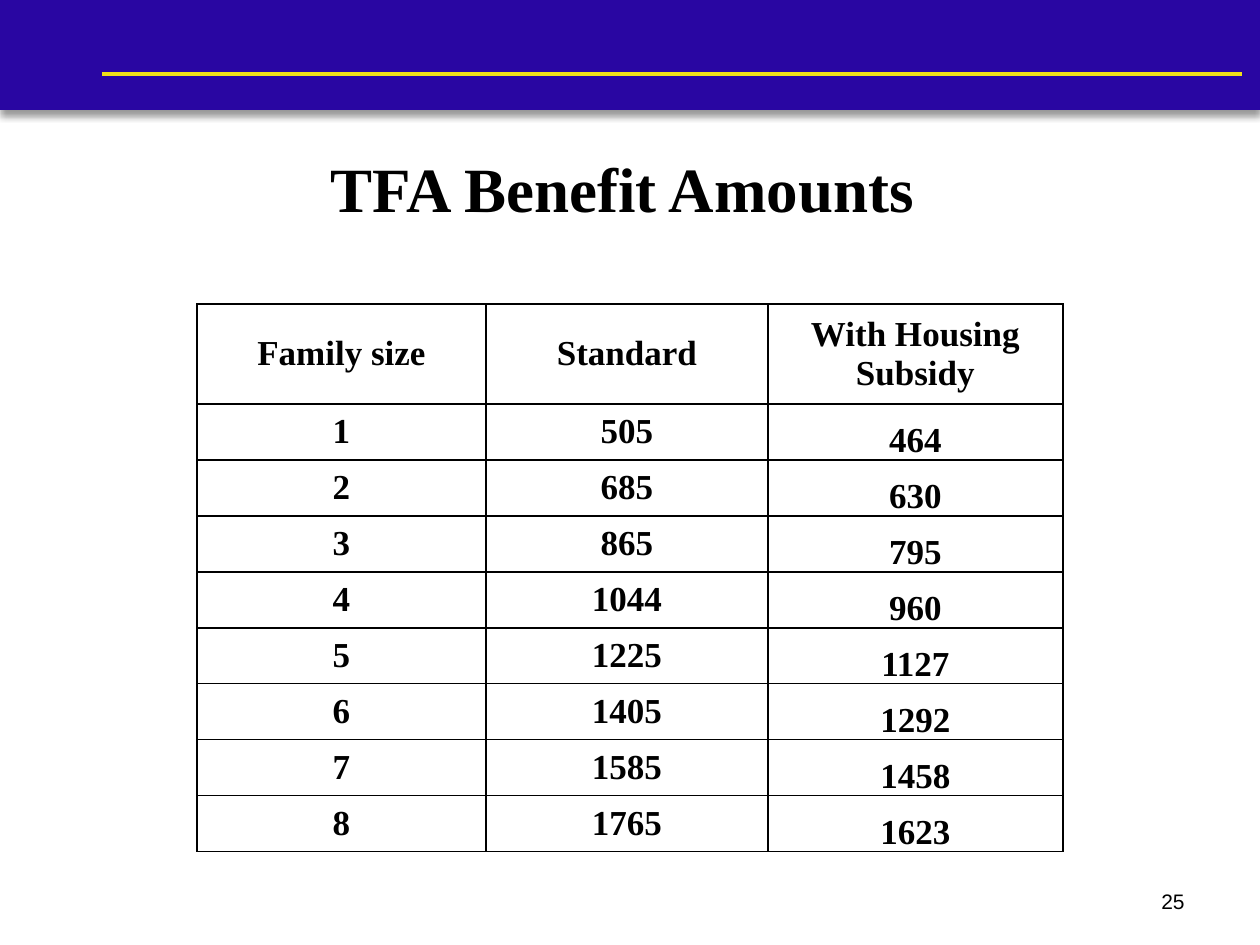
from pptx import Presentation
from pptx.dml.color import RGBColor
from pptx.enum.shapes import MSO_CONNECTOR, MSO_SHAPE
from pptx.enum.text import MSO_ANCHOR, PP_ALIGN
from pptx.oxml import parse_xml
from pptx.oxml.ns import nsdecls
from pptx.util import Emu, Pt

CENTER, RIGHT = PP_ALIGN.CENTER, PP_ALIGN.RIGHT
TOP, MIDDLE, BOTTOM = MSO_ANCHOR.TOP, MSO_ANCHOR.MIDDLE, MSO_ANCHOR.BOTTOM
PX_PER_INCH = 126
SERIF, SANS = "Times New Roman", "Arial"
BLACK, BLUE, YELLOW = "000000", "2906A2", "F0E018"

TITLE = "TFA Benefit Amounts "
SLIDE_NUMBER = "25"
HEADERS = ["Family size", "Standard", "With Housing Subsidy"]
STANDARD = [505, 685, 865, 1044, 1225, 1405, 1585, 1765]
WITH_SUBSIDY = [464, 630, 795, 960, 1127, 1292, 1458, 1623]
ROWS = [HEADERS] + [
    [size, *amounts]
    for size, amounts in enumerate(zip(STANDARD, WITH_SUBSIDY), start=1)
]
TABLE_LEFT, TABLE_TOP = 197, 304
COLUMN_WIDTHS = [289, 282, 295]
ROW_HEIGHTS = [100] + [56] * len(STANDARD)


def px(value):
    return Emu(round(value * 914400 / PX_PER_INCH))


def color(hex_string):
    return RGBColor.from_string(hex_string)


def format_text(text_frame, font_name, size, alignment, bold=False):
    paragraph = text_frame.paragraphs[0]
    paragraph.alignment = alignment
    font = paragraph.runs[0].font
    font.name, font.size, font.bold = font_name, Pt(size), bold
    font.color.rgb = color(BLACK)


def add_text(slide, text, box, anchor, *style):
    text_frame = slide.shapes.add_textbox(*map(px, box)).text_frame
    text_frame.word_wrap = True
    text_frame.vertical_anchor = anchor
    text_frame.text = text
    format_text(text_frame, *style)
    return text_frame


def add_banner(slide):
    banner = slide.shapes.add_shape(
        MSO_SHAPE.RECTANGLE, 0, 0, px(1260), px(110))
    banner.fill.solid()
    banner.fill.fore_color.rgb = color(BLUE)
    banner.line.fill.background()
    banner._element.spPr.append(parse_xml(
        f'<a:effectLst {nsdecls("a")}>'
        f'<a:outerShdw blurRad="{Pt(4)}" dist="{Pt(3)}" dir="5400000" rotWithShape="0">'
        f'<a:srgbClr val="{BLACK}"><a:alpha val="40000"/></a:srgbClr>'
        '</a:outerShdw></a:effectLst>'))

    rule = slide.shapes.add_connector(
        MSO_CONNECTOR.STRAIGHT, px(102), px(74), px(1242), px(74))
    rule.line.color.rgb = color(YELLOW)
    rule.line.width = Pt(2)
    rule._element.spPr.append(parse_xml(f'<a:effectLst {nsdecls("a")}/>'))


def add_borders(cell):
    properties = cell._tc.get_or_add_tcPr()
    for side in ("lnL", "lnR", "lnT", "lnB"):
        properties.append(parse_xml(
            f'<a:{side} {nsdecls("a")} w="{Pt(1)}"><a:solidFill>'
            f'<a:srgbClr val="{BLACK}"/></a:solidFill></a:{side}>'))


def add_benefit_table(slide):
    table = slide.shapes.add_table(
        len(ROWS), len(HEADERS), px(TABLE_LEFT), px(TABLE_TOP),
        px(sum(COLUMN_WIDTHS)), px(sum(ROW_HEIGHTS))).table
    table.first_row = table.horz_banding = False
    for column, width in zip(table.columns, COLUMN_WIDTHS):
        column.width = px(width)
    for row, height in zip(table.rows, ROW_HEIGHTS):
        row.height = px(height)

    for row_index, values in enumerate(ROWS):
        for column_index, value in enumerate(values):
            cell = table.cell(row_index, column_index)
            cell.text_frame.text = str(value)
            format_text(cell.text_frame, SERIF, 20, CENTER, True)
            cell.vertical_anchor = MIDDLE
            if row_index > 0 and column_index == len(HEADERS) - 1:
                cell.vertical_anchor = BOTTOM
                cell.margin_left = cell.margin_right = px(9)
                cell.margin_top = cell.margin_bottom = 0
            add_borders(cell)
            cell.fill.background()


def main():
    presentation = Presentation()
    presentation.slide_width, presentation.slide_height = px(1260), px(945)
    slide = presentation.slides.add_slide(presentation.slide_layouts[6])
    add_banner(slide)
    add_text(slide, SLIDE_NUMBER, (903, 876, 294, 50), MIDDLE, SANS, 12, RIGHT)
    add_benefit_table(slide)
    title = add_text(
        slide, TITLE, (32, 136, 1197, 89), TOP, SERIF, 36, CENTER, True)
    title.margin_top = px(14)
    presentation.save("out.pptx")


if __name__ == "__main__":
    main()
